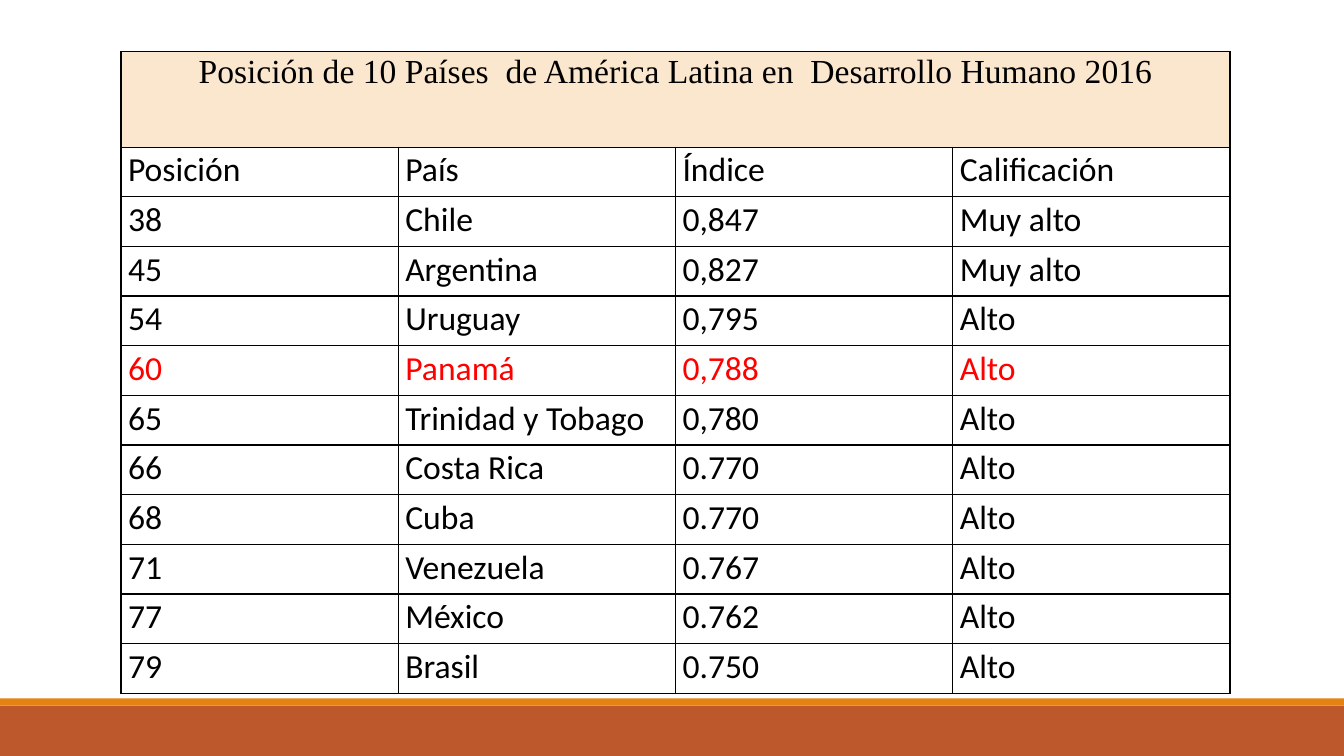
import pptx
import pptx.util
import pptx.dml.color
import pptx.enum.shapes
import pptx.enum.text
from lxml import etree
from pptx.oxml.ns import qn
from pptx.util import Inches, Pt

COLORS = {
    "text": "000000",
    "highlight": "FF0000",
    "heading": "FBE6CE",
    "border": "000000",
    "footer": "BD582C",
    "stripe": "E48312",
}
HEADING = "Posición de 10 Países  de América Latina en  Desarrollo Humano 2016"
COLUMNS = ("Posición", "País", "Índice", "Calificación")
COUNTRIES = [
    ("38", "Chile", "0,847", "Muy alto"),
    ("45", "Argentina", "0,827", "Muy alto"),
    ("54", "Uruguay", "0,795", "Alto"),
    ("60", "Panamá", "0,788", "Alto"),
    ("65", "Trinidad y Tobago", "0,780", "Alto"),
    ("66", "Costa Rica", "0.770", "Alto"),
    ("68", "Cuba", "0.770", "Alto"),
    ("71", "Venezuela", "0.767", "Alto"),
    ("77", "México", "0.762", "Alto"),
    ("79", "Brasil", "0.750", "Alto"),
]
HIGHLIGHTED = "Panamá"


def rgb(name):
    """Return the named colour."""
    return pptx.dml.color.RGBColor.from_string(COLORS[name])


def add_band(slide, left, top, width, height, color):
    """Draw a plain band in the given box."""
    band = slide.shapes.add_shape(
        pptx.enum.shapes.MSO_SHAPE.RECTANGLE,
        Inches(left), Inches(top), Inches(width), Inches(height))
    band.shadow.inherit = False
    band.fill.solid()
    band.fill.fore_color.rgb = rgb(color)
    band.line.fill.background()


def add_footer(slide, left, top, width, height):
    """Draw the stripe and the footer band below it."""
    stripe_height = 0.07
    add_band(slide, left, top + stripe_height, width, height - stripe_height, "footer")
    add_band(slide, left, top, width, stripe_height, "stripe")


def add_borders(cell):
    """Give a cell a thin line on all four sides."""
    properties = cell._tc.get_or_add_tcPr()
    for position, side in enumerate(("lnL", "lnR", "lnT", "lnB")):
        border = etree.Element(qn(f"a:{side}"), w=str(Pt(1)))
        fill = etree.SubElement(border, qn("a:solidFill"))
        etree.SubElement(fill, qn("a:srgbClr"), val=COLORS["border"])
        properties.insert(position, border)


def write_cell(cell, text, font="Calibri", color="text"):
    """Set the text of a cell and its format."""
    cell.margin_left = cell.margin_right = Inches(0.07)
    cell.margin_top = cell.margin_bottom = 0
    paragraph = cell.text_frame.paragraphs[0]
    paragraph.text = text
    paragraph.line_spacing = 1.07
    paragraph.font.size = Pt(24)
    for run in paragraph.runs:
        run.font.name = font
        run.font.size = Pt(24)
        run.font.bold = False
        run.font.color.rgb = rgb(color)


def add_ranking(slide, left, top, width, height):
    """Place the ranking table in the given box."""
    rows = [COLUMNS] + COUNTRIES
    heading_height = 0.95
    ranking = slide.shapes.add_table(
        len(rows) + 1, len(COLUMNS),
        Inches(left), Inches(top), Inches(width), Inches(height)).table
    ranking.first_row = ranking.horz_banding = False
    for column in ranking.columns:
        column.width = Inches(width / len(COLUMNS))
    for row in ranking.rows:
        row.height = Inches((height - heading_height) / len(rows))
    ranking.rows[0].height = Inches(heading_height)

    for cell in ranking.iter_cells():
        cell.fill.background()
        add_borders(cell)

    heading = ranking.cell(0, 0)
    heading.merge(ranking.cell(0, len(COLUMNS) - 1))
    heading.fill.solid()
    heading.fill.fore_color.rgb = rgb("heading")
    write_cell(heading, HEADING, font="Times New Roman")
    heading.text_frame.paragraphs[0].alignment = pptx.enum.text.PP_ALIGN.CENTER

    for row_index, values in enumerate(rows, start=1):
        color = "highlight" if HIGHLIGHTED in values else "text"
        for column_index, value in enumerate(values):
            write_cell(ranking.cell(row_index, column_index), value, color=color)


def main():
    """Build and save the slide."""
    presentation = pptx.Presentation()
    presentation.slide_width = Inches(13.33)
    presentation.slide_height = Inches(7.5)
    slide = presentation.slides.add_slide(presentation.slide_layouts[6])
    add_footer(slide, 0, 6.93, 13.33, 0.57)
    add_ranking(slide, 1.2, 0.51, 11, 6.37)
    presentation.save("out.pptx")


if __name__ == "__main__":
    main()
